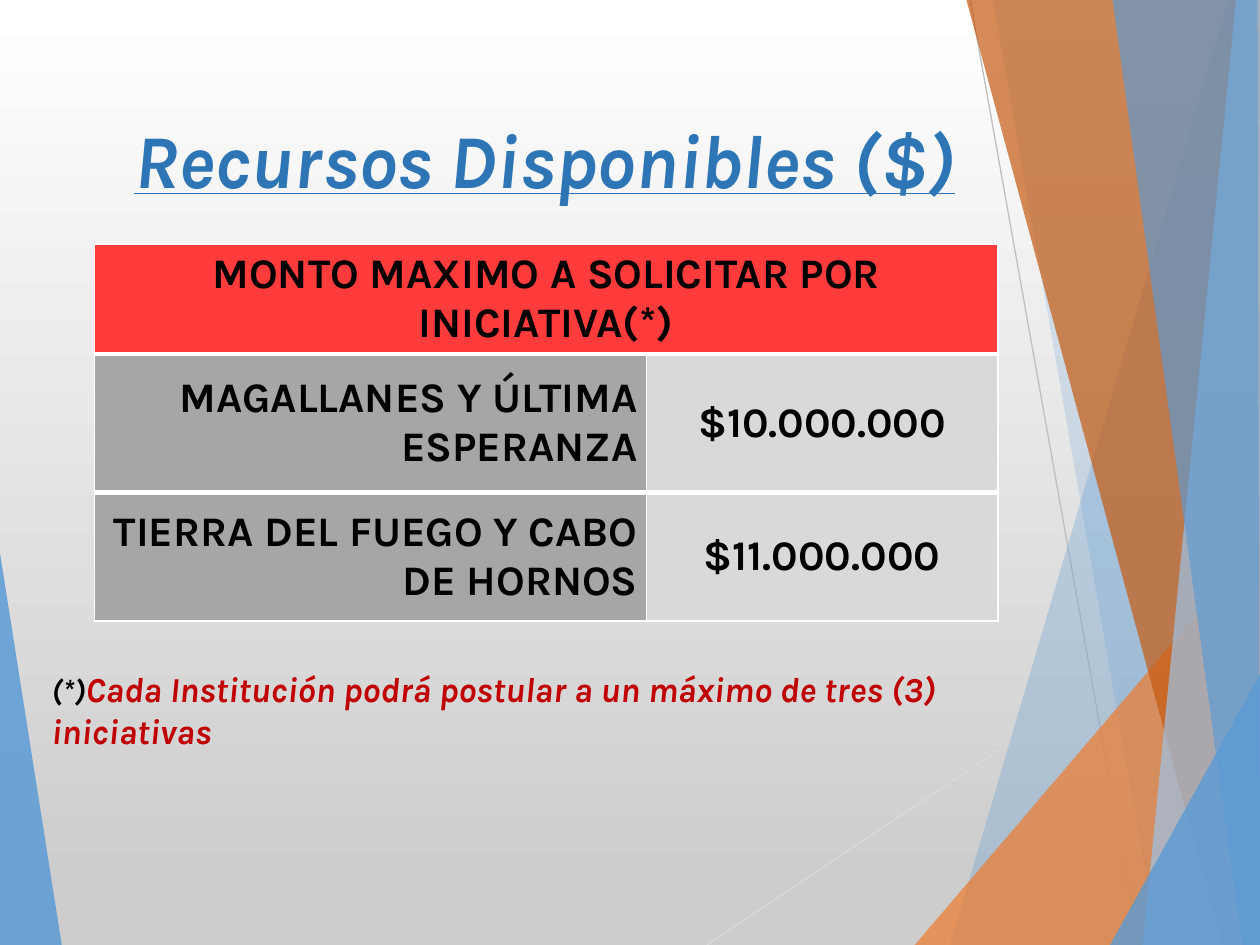
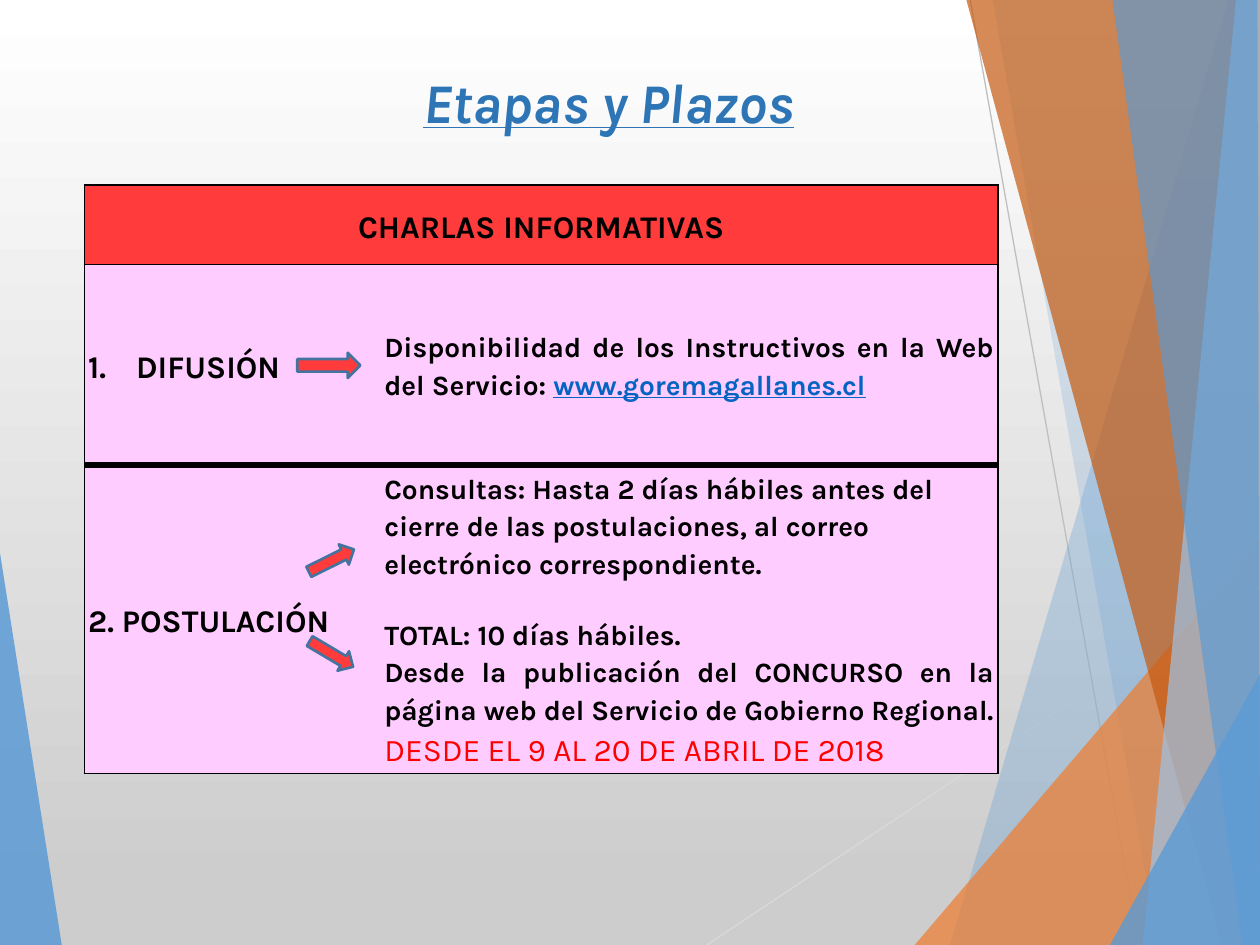
from lxml.etree import SubElement
from pptx import Presentation
from pptx.dml.color import RGBColor
from pptx.enum.shapes import MSO_CONNECTOR, MSO_SHAPE
from pptx.enum.text import MSO_ANCHOR as ANCHOR, MSO_AUTO_SIZE as AUTO, PP_ALIGN as ALIGN
from pptx.oxml.ns import qn
from pptx.util import Emu, Inches, Pt

# Colours
BLACK = RGBColor(0x00, 0x00, 0x00)
WHITE = RGBColor(0xFF, 0xFF, 0xFF)
BACK_GRAY = RGBColor(0xCD, 0xCD, 0xCD)
LINE_GRAY = RGBColor(0xBF, 0xBF, 0xBF)
PALE_GRAY = RGBColor(0xD9, 0xD9, 0xD9)
MID_GRAY = RGBColor(0xA6, 0xA6, 0xA6)
TITLE_BLUE = RGBColor(0x2E, 0x75, 0xB6)
BLUE = RGBColor(0x5B, 0x9B, 0xD5)
SKY = RGBColor(0x9D, 0xC3, 0xE6)
EDGE_BLUE = RGBColor(0x43, 0x73, 0x9E)
LINK_BLUE = RGBColor(0x05, 0x63, 0xC1)
ORANGE = RGBColor(0xED, 0x7D, 0x31)
RUST = RGBColor(0xC5, 0x5A, 0x11)
HEADER_RED = RGBColor(0xFF, 0x3B, 0x3B)
NOTE_RED = RGBColor(0xC0, 0x00, 0x00)
DATE_RED = RGBColor(0xFF, 0x00, 0x00)
PINK = RGBColor(0xFF, 0xCC, 0xFF)

# Grid of the slide: square cells
COLUMNS, ROWS = 100, 75
FONT = "Karla"
NO_TABLE_STYLE = "{2D5ABB26-0587-4C30-8999-92F81FD0307C}"

# Translucent bands, in columns and rows: colour, opacity in percent, corners
BANDS = [
    (BLUE, 85, [(0, 43.9), (4.9, 75), (0, 75)]),
    (BLUE, 30, [(97.5, 0), (75.4, 75), (100, 75), (100, 0)]),
    (BLUE, 20, [(78.8, 0), (91.9, 75), (100, 75), (100, 0)]),
    (ORANGE, 72, [(72.6, 75), (100, 42.9), (100, 75)]),
    (RUST, 70, [(76.7, 0), (97, 75), (100, 75), (100, 0)]),
    (SKY, 70, [(98.1, 0), (90.7, 75), (100, 75), (100, 0)]),
    (BLUE, 65, [(88.3, 0), (98.6, 75), (100, 75), (99.8, 0)]),
    (BLUE, 80, [(88.1, 75), (100, 53.5), (100, 75)]),
]
HAIRLINES = [
    (PALE_GRAY, (56.1, 75), (100, 45.7)),
    (LINE_GRAY, (77, 0), (90.4, 75)),
]


class Deck:
    """Holds the style and the current slide."""

    def __init__(self):
        self.prs = Presentation()
        self.prs.slide_width, self.prs.slide_height = Inches(10), Inches(7.5)
        self.layout = self.prs.slide_layouts.get_by_name("Title Only")
        self.slide = None

    def x(self, columns):
        return Emu(round(self.prs.slide_width * columns / COLUMNS))

    def y(self, rows):
        return Emu(round(self.prs.slide_height * rows / ROWS))

    def box(self, left, top, width, height):
        return self.x(left), self.y(top), self.x(width), self.y(height)

    def new_slide(self):
        self.slide = self.prs.slides.add_slide(self.layout)

    # Shared backdrop, kept on the layout
    def backdrop(self):
        fill = self.layout.background.fill
        fill.gradient()
        fill.gradient_angle = 270
        for stop, color, position in zip(fill.gradient_stops, (WHITE, BACK_GRAY), (0, 0.94)):
            stop.color.rgb, stop.position = color, position
        first_band, *other_bands = BANDS
        pieces = [self.band(*first_band)]
        pieces += [self.hairline(*line) for line in HAIRLINES]
        pieces += [self.band(*band) for band in other_bands]
        for piece in pieces:
            self.layout.shapes.element.append(piece.element)

    def band(self, color, opacity, corners):
        start, *rest = [(self.x(column), self.y(row)) for column, row in corners]
        builder = self.slide.shapes.build_freeform(*start)
        builder.add_line_segments(rest)
        band = builder.convert_to_shape()
        band.shadow.inherit = False
        band.fill.solid()
        band.fill.fore_color.rgb = color
        band.line.fill.background()
        rgb = band.element.spPr.find(".//" + qn("a:srgbClr"))
        SubElement(rgb, qn("a:alpha"), val=str(opacity * 1000))
        return band

    def hairline(self, color, start, end):
        line = self.slide.shapes.add_connector(
            MSO_CONNECTOR.STRAIGHT,
            self.x(start[0]), self.y(start[1]), self.x(end[0]), self.y(end[1]))
        line.line.color.rgb = color
        line.line.width = Pt(0.75)
        SubElement(line.element.spPr, qn("a:effectLst"))
        return line

    # Text
    def style(self, font, size=None, color=None, bold=None, italic=None, underline=None):
        font.name, font.size = FONT, size and Pt(size)
        font.bold, font.italic, font.underline = bold, italic, underline
        if color is not None:
            font.color.rgb = color

    def set_text(self, frame, paragraphs):
        """Each paragraph is a dict: runs, layout settings and font settings."""
        for index, settings in enumerate(paragraphs):
            look = {"color": BLACK, "bold": True, **settings}
            runs = look.pop("runs")
            paragraph = frame.add_paragraph() if index else frame.paragraphs[0]
            paragraph.alignment = look.pop("align", ALIGN.LEFT)
            paragraph.line_spacing = look.pop("spacing", 1.0)
            paragraph.space_before = Pt(look.pop("before", 0))
            if look.pop("numbered", False):
                properties = paragraph._p.get_or_add_pPr()
                indent = Inches(0.38)
                properties.set("marL", str(int(indent)))
                properties.set("indent", str(-int(indent)))
                SubElement(properties, qn("a:buFont"), typeface="+mj-lt")
                SubElement(properties, qn("a:buAutoNum"), type="arabicPeriod")
            self.style(paragraph.font, **look)
            for text, change in runs:
                run = paragraph.add_run()
                run.text = text
                if change:
                    self.style(run.font, **{**look, **change})

    def title(self, text, place, size, spacing):
        title = self.slide.shapes.title
        title.left, title.top, title.width, title.height = self.box(*place)
        frame = title.text_frame
        frame.auto_size = AUTO.NONE
        frame.vertical_anchor = ANCHOR.BOTTOM
        frame.margin_top = frame.margin_bottom = 0
        self.set_text(frame, [para(text, size=size, spacing=spacing, align=ALIGN.CENTER,
                                   color=TITLE_BLUE, italic=True, underline=True)])

    def note(self, place, paragraphs):
        frame = self.slide.shapes.add_textbox(*self.box(*place)).text_frame
        frame.word_wrap = True
        self.set_text(frame, paragraphs)

    # Tables
    def table(self, corner, widths, heights):
        place = self.box(*corner, sum(widths), sum(heights))
        graphic = self.slide.shapes.add_table(len(heights), len(widths), *place)
        graphic.element.find(".//" + qn("a:tableStyleId")).text = NO_TABLE_STYLE
        table = graphic.table
        table.first_row = table.horz_banding = False
        for column, width in zip(table.columns, widths):
            column.width = self.x(width)
        for row, height in zip(table.rows, heights):
            row.height = self.y(height)
        return table

    def cell(self, cell, paragraphs, fill, line, sides, side_margin=0.1, end_margin=0.0):
        """sides maps L, R, T and B to the border width in points."""
        cell.fill.solid()
        cell.fill.fore_color.rgb = fill
        cell.vertical_anchor = ANCHOR.MIDDLE
        cell.margin_left = cell.margin_right = Inches(side_margin)
        cell.margin_top = cell.margin_bottom = Inches(end_margin)
        properties = cell._tc.get_or_add_tcPr()
        for index, side in enumerate(side for side in "LRTB" if side in sides):
            border = SubElement(properties, qn("a:ln" + side), w=str(int(Pt(sides[side]))))
            solid = SubElement(border, qn("a:solidFill"))
            SubElement(solid, qn("a:srgbClr"), val=str(line))
            properties.insert(index, border)
        self.set_text(cell.text_frame, paragraphs)

    # Arrows
    def arrow(self, place, rotation=0.0):
        arrow = self.slide.shapes.add_shape(MSO_SHAPE.RIGHT_ARROW, *self.box(*place))
        arrow.rotation = rotation
        arrow.shadow.inherit = False
        arrow.fill.solid()
        arrow.fill.fore_color.rgb = HEADER_RED
        arrow.line.color.rgb = EDGE_BLUE
        arrow.line.width = Pt(1.5)


def para(*runs, **settings):
    """A paragraph from plain strings or (text, font changes) pairs."""
    pairs = [(run, {}) if isinstance(run, str) else run for run in runs]
    return {"runs": pairs, **settings}


def resources_slide(deck):
    deck.title("Recursos Disponibles ($)", (3.1, 6.8, 80.3, 9.2), 43.4, 0.7)

    # Amounts by province
    amounts = [("MAGALLANES Y ÚLTIMA ESPERANZA", "$10.000.000"),
               ("TIERRA DEL FUEGO Y CABO DE HORNOS", "$11.000.000")]
    by_province = deck.table((7.5, 28.1), (43.8, 27.9), (11, 10.2))
    for row, (province, amount) in enumerate(amounts):
        sides = {"L": 1, "R": 1, "T": 3 if row else 1, "B": 1 if row else 3}
        deck.cell(by_province.cell(row, 0), [para(province, size=24, align=ALIGN.RIGHT)],
                  MID_GRAY, WHITE, sides, side_margin=0.07)
        deck.cell(by_province.cell(row, 1), [para(amount, size=24, align=ALIGN.CENTER)],
                  PALE_GRAY, WHITE, sides)

    # Heading over the amounts
    heading = deck.table((7.5, 19.4), (71.7,), (8.7,))
    deck.cell(heading.cell(0, 0),
              [para("MONTO MAXIMO A SOLICITAR POR INICIATIVA(*)", size=24, align=ALIGN.CENTER)],
              HEADER_RED, WHITE, {"L": 1, "R": 1, "T": 1, "B": 3}, end_margin=0.04)

    # Footnote
    rule = "Cada Institución podrá postular a un máximo de tres (3) iniciativas"
    deck.note((3.1, 52.5, 84.3, 7.7),
              [para("(*)", (rule, {"size": 20, "color": NOTE_RED}), size=18, italic=True)])


def stages_slide(deck):
    deck.title("Etapas y Plazos", (9.3, 5.2, 78, 5.6), 32, 0.9)

    # Stages and deadlines
    stages = deck.table((6.7, 14.7), (23.5, 49), (6.3, 15.9, 24.5))
    stages.cell(0, 0).merge(stages.cell(0, 1))
    link = ("www.goremagallanes.cl", {"color": LINK_BLUE, "underline": True})
    contents = [
        ([para("CHARLAS INFORMATIVAS", size=18, align=ALIGN.CENTER)], []),
        ([para("DIFUSIÓN", size=18, numbered=True)],
         [para("Disponibilidad de los Instructivos en la Web del Servicio: ", link,
               size=16, align=ALIGN.JUSTIFY)]),
        ([para("2. POSTULACIÓN", size=18)],
         [para("Consultas: Hasta 2 días hábiles antes del cierre de las postulaciones, "
               "al correo electrónico correspondiente.", size=16),
          para("TOTAL: 10 días hábiles.", size=16, align=ALIGN.JUSTIFY, before=19),
          para("Desde la publicación del CONCURSO en la página web del Servicio de "
               "Gobierno Regional.", size=16, align=ALIGN.JUSTIFY),
          para("DESDE EL 9 AL 20 DE ABRIL DE 2018", size=18, align=ALIGN.JUSTIFY,
               color=DATE_RED, bold=False)]),
    ]
    rules = [1, 1, 4, 1]
    for row, pair in enumerate(contents):
        for column, (paragraphs, outer) in enumerate(zip(pair, "LR")):
            spaced = [{**paragraph, "spacing": 1.15} for paragraph in paragraphs]
            sides = {outer: 1, "T": rules[row], "B": rules[row + 1]}
            if row == 0:
                sides.update(L=1, R=1)
            deck.cell(stages.cell(row, column), spaced, PINK if row else HEADER_RED,
                      BLACK, sides, side_margin=0.03)

    # Arrows from each stage to its details
    deck.arrow((24.3, 43.6, 4, 1.8), 333.6)
    deck.arrow((23.6, 28, 5, 2))
    deck.arrow((24.3, 51, 4, 1.8), 30.7)


def main():
    deck = Deck()
    deck.new_slide()
    deck.backdrop()
    resources_slide(deck)
    deck.new_slide()
    stages_slide(deck)
    deck.prs.save("out.pptx")


if __name__ == "__main__":
    main()
